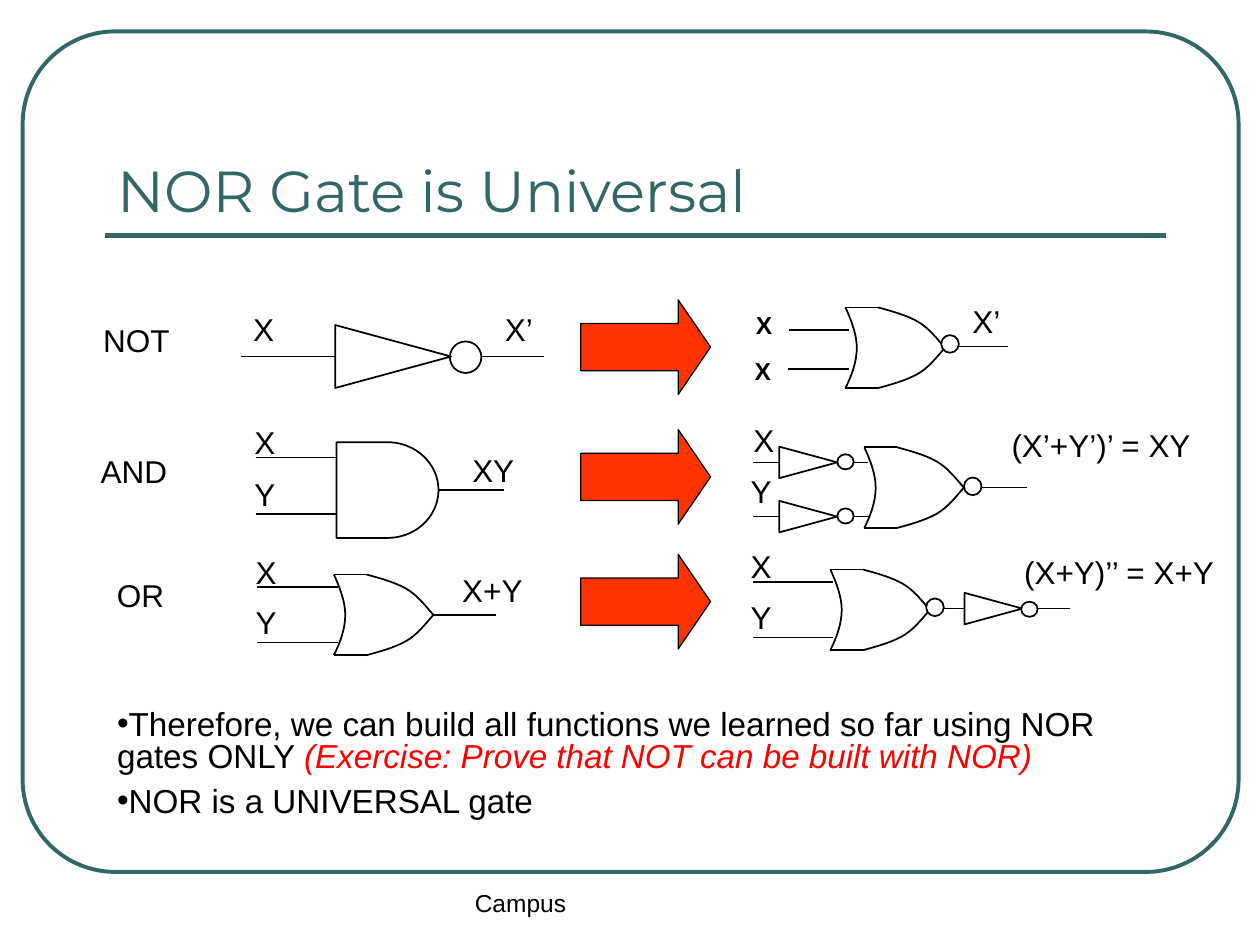
from dataclasses import dataclass

from lxml import etree
from pptx import Presentation
from pptx import util as u
from pptx.dml.color import RGBColor
from pptx.enum import shapes, text
from pptx.oxml.ns import qn


@dataclass(frozen=True)
class Theme:
    teal: RGBColor = RGBColor(0x33, 0x66, 0x66)
    black: RGBColor = RGBColor(0, 0, 0)
    white: RGBColor = RGBColor(255, 255, 255)
    red: RGBColor = RGBColor(255, 0, 0)
    arrow: RGBColor = RGBColor(0xFF, 0x33, 0)
    heading_font: str = "Montserrat"
    font: str = "Arial"
    title_size: int = 33
    body_size: int = 19
    label_size: int = 18
    small_size: int = 14


theme = Theme()


def style_outline(shape, color=theme.black, width=1, fill=None):
    """Set line and fill, and drop the theme shadow, of a shape or connector."""
    shape.line.color.rgb = color
    shape.line.width = u.Pt(width)
    if not hasattr(shape, "fill"):
        etree.SubElement(shape._element.spPr, qn("a:effectLst"))
        return
    shape.shadow.inherit = False
    if fill is None:
        shape.fill.background()
    else:
        shape.fill.solid()
        shape.fill.fore_color.rgb = fill


def add_run(paragraph, words, size, color=theme.black, font=theme.font):
    run = paragraph.add_run()
    run.text = words
    run.font.size = u.Pt(size)
    run.font.name = font
    run.font.color.rgb = color
    return run


presentation = Presentation()
presentation.slide_width = u.Inches(10)
presentation.slide_height = u.Inches(7.5)
slide = presentation.slides.add_slide(presentation.slide_layouts[1])
preset = shapes.MSO_SHAPE
straight = shapes.MSO_CONNECTOR.STRAIGHT

# Frame and title rule
frame = slide.shapes.add_shape(preset.ROUNDED_RECTANGLE, *map(u.Inches, (0.18, 0.25, 9.65, 6.67)))
frame.adjustments[0] = 0.11
style_outline(frame, theme.teal, 2.25)
rule = slide.shapes.add_connector(straight, *map(u.Inches, (0.83, 1.87, 9.25, 1.87)))
style_outline(rule, theme.teal, 3)

# Title
title = slide.shapes.title
title.left, title.top, title.width, title.height = map(u.Inches, (0.83, 0.58, 8.41, 1.25))
title.text_frame.vertical_anchor = text.MSO_ANCHOR.BOTTOM
title.text_frame.auto_size = text.MSO_AUTO_SIZE.NONE
paragraph = title.text_frame.paragraphs[0]
paragraph.alignment = text.PP_ALIGN.LEFT
add_run(paragraph, "NOR Gate is Universal", theme.title_size, theme.teal, theme.heading_font)

# Conclusions
body = slide.placeholders[1]
body.left, body.top, body.width, body.height = map(u.Inches, (0.83, 5.59, 8.58, 1.08))
body.text_frame.auto_size = text.MSO_AUTO_SIZE.NONE
conclusions = [
    [("Therefore, we can build all functions we learned so far using NOR gates ONLY ", False),
     ("(Exercise: Prove that NOT can be built with NOR)", True)],
    [("NOR is a UNIVERSAL gate", False)],
]
for index, runs in enumerate(conclusions):
    paragraph = body.text_frame.add_paragraph() if index else body.text_frame.paragraphs[0]
    paragraph.line_spacing = 0.8
    paragraph.space_before = u.Pt(7.8)
    properties = paragraph._p.get_or_add_pPr()
    properties.set("marL", "0")
    properties.set("indent", "0")
    etree.SubElement(properties, qn("a:buChar")).set("char", "•")
    for words, exercise in runs:
        run = add_run(paragraph, words, theme.body_size, theme.red if exercise else theme.black)
        run.font.italic = exercise

# Row names, signal labels and footer: left, top, width, height, words, size
for left, top, width, height, words, size in [
    (0.72, 2.5, 0.88, 0.5, "NOT", theme.label_size),
    (0.7, 3.54, 0.92, 0.5, "AND", theme.label_size),
    (0.83, 4.52, 0.66, 0.5, "OR", theme.label_size),
    (1.91, 2.41, 0.38, 0.4, "X", theme.label_size),
    (3.91, 2.41, 0.46, 0.4, "X’", theme.label_size),
    (7.62, 2.35, 0.46, 0.4, "X’", theme.label_size),
    (1.92, 3.31, 0.38, 0.4, "X", theme.label_size),
    (1.92, 3.72, 0.38, 0.4, "Y", theme.label_size),
    (3.65, 3.53, 0.56, 0.4, "XY", theme.label_size),
    (5.88, 3.29, 0.38, 0.4, "X", theme.label_size),
    (5.86, 3.7, 0.38, 0.4, "Y", theme.label_size),
    (7.93, 3.33, 1.74, 0.4, "(X’+Y’)’ = XY", theme.label_size),
    (1.93, 4.34, 0.38, 0.4, "X", theme.label_size),
    (1.93, 4.74, 0.38, 0.4, "Y", theme.label_size),
    (3.57, 4.48, 0.7, 0.4, "X+Y", theme.label_size),
    (5.86, 4.29, 0.38, 0.4, "X", theme.label_size),
    (5.86, 4.7, 0.38, 0.4, "Y", theme.label_size),
    (8.03, 4.34, 1.8, 0.4, "(X+Y)’’ = X+Y", theme.label_size),
    (5.9, 2.41, 0.33, 0.34, "X", theme.small_size),
    (5.89, 2.78, 0.33, 0.34, "X", theme.small_size),
    (3.67, 7, 3.16, 0.5, "Campus", theme.small_size),
]:
    box = slide.shapes.add_textbox(*map(u.Inches, (left, top, width, height)))
    box.text_frame.word_wrap = True
    run = add_run(box.text_frame.paragraphs[0], words, size)
    run.font.bold = words == "X" and size == theme.small_size

# Block arrows from each gate to its NOR form
for top in (2.38, 3.41, 4.4):
    arrow = slide.shapes.add_shape(preset.RIGHT_ARROW, *map(u.Inches, (4.61, top, 1.03, 0.75)))
    arrow.adjustments[1] = 0.342
    style_outline(arrow, width=0.75, fill=theme.arrow)

# Horizontal wires: start, end, height
wires = [
    (1.91, 2.66, 2.83), (3.82, 4.32, 2.83),
    (6.26, 6.74, 2.62), (6.25, 6.74, 2.93), (7.5, 8, 2.75),
    (2.03, 2.67, 3.63), (2.03, 2.67, 4.08), (3.48, 4, 3.89),
    (5.98, 6.19, 3.67), (6.77, 6.89, 3.67),
    (5.98, 6.19, 4.1), (6.77, 6.9, 4.1), (7.65, 8.15, 3.87),
    (2.04, 2.68, 4.66), (2.04, 2.68, 5.1), (3.44, 3.94, 4.88),
    (5.98, 6.61, 4.62), (5.98, 6.61, 5.06), (7.38, 7.88, 4.83), (8.24, 8.49, 4.83),
]

# OR gates: three curves of two cubic Bézier pieces each, and two straight edges
gate_height, shoulder = 0.64, 0.26
back = [(0, 0), (0.05, 0.11), (0.09, 0.22), (0.09, 0.32), (0.09, 0.43), (0.05, 0.54), (0, 0.64)]
upper = [(0.26, 0), (0.37, 0.03), (0.48, 0.06), (0.57, 0.11), (0.66, 0.16), (0.72, 0.24), (0.79, 0.32)]
lower = [(x, gate_height - y) for x, y in upper]
for left, top in [(6.71, 2.44), (6.86, 3.55), (2.65, 4.56), (6.59, 4.52)]:
    wires += [(left, left + shoulder, y) for y in (top, top + gate_height)]
    for curve in (back, upper, lower):
        points = [(u.Inches(left + x), u.Inches(top + y)) for x, y in curve]
        builder = slide.shapes.build_freeform(*points[0])
        builder.add_line_segments(points[1:], close=False)
        side = builder.convert_to_shape()
        segments = list(side._element.iter(qn("a:lnTo")))
        for first in (0, 3):
            bezier = etree.SubElement(segments[0].getparent(), qn("a:cubicBezTo"))
            for segment in segments[first:first + 3]:
                bezier.append(segment[0])
        for segment in segments:
            segment.getparent().remove(segment)
        style_outline(side)

for start, end, y in wires:
    style_outline(slide.shapes.add_connector(straight, *map(u.Inches, (start, y, end, y))))

# AND gate
and_gate = slide.shapes.add_shape(preset.FLOWCHART_DELAY, *map(u.Inches, (2.67, 3.51, 0.81, 0.76)))
style_outline(and_gate)

# Inverter triangles and bubbles: preset, left, top, width, height, fill
triangle, bubble = preset.ISOSCELES_TRIANGLE, preset.OVAL
for kind, left, top, width, height, fill in [
    (triangle, 2.87, 2.37, 0.5, 0.92, None), (bubble, 3.57, 2.71, 0.25, 0.25, None),
    (bubble, 7.47, 2.66, 0.14, 0.14, theme.white),
    (triangle, 6.29, 3.44, 0.25, 0.46, None), (bubble, 6.65, 3.6, 0.12, 0.13, None),
    (triangle, 6.29, 3.87, 0.25, 0.46, None), (bubble, 6.65, 4.03, 0.12, 0.13, None),
    (bubble, 7.65, 3.79, 0.14, 0.14, theme.white),
    (bubble, 7.35, 4.75, 0.14, 0.14, theme.white),
    (triangle, 7.76, 4.6, 0.25, 0.46, theme.white), (bubble, 8.11, 4.77, 0.12, 0.13, theme.white),
]:
    symbol = slide.shapes.add_shape(kind, *map(u.Inches, (left, top, width, height)))
    symbol.rotation = 90
    style_outline(symbol, fill=fill)

presentation.save("out.pptx")
